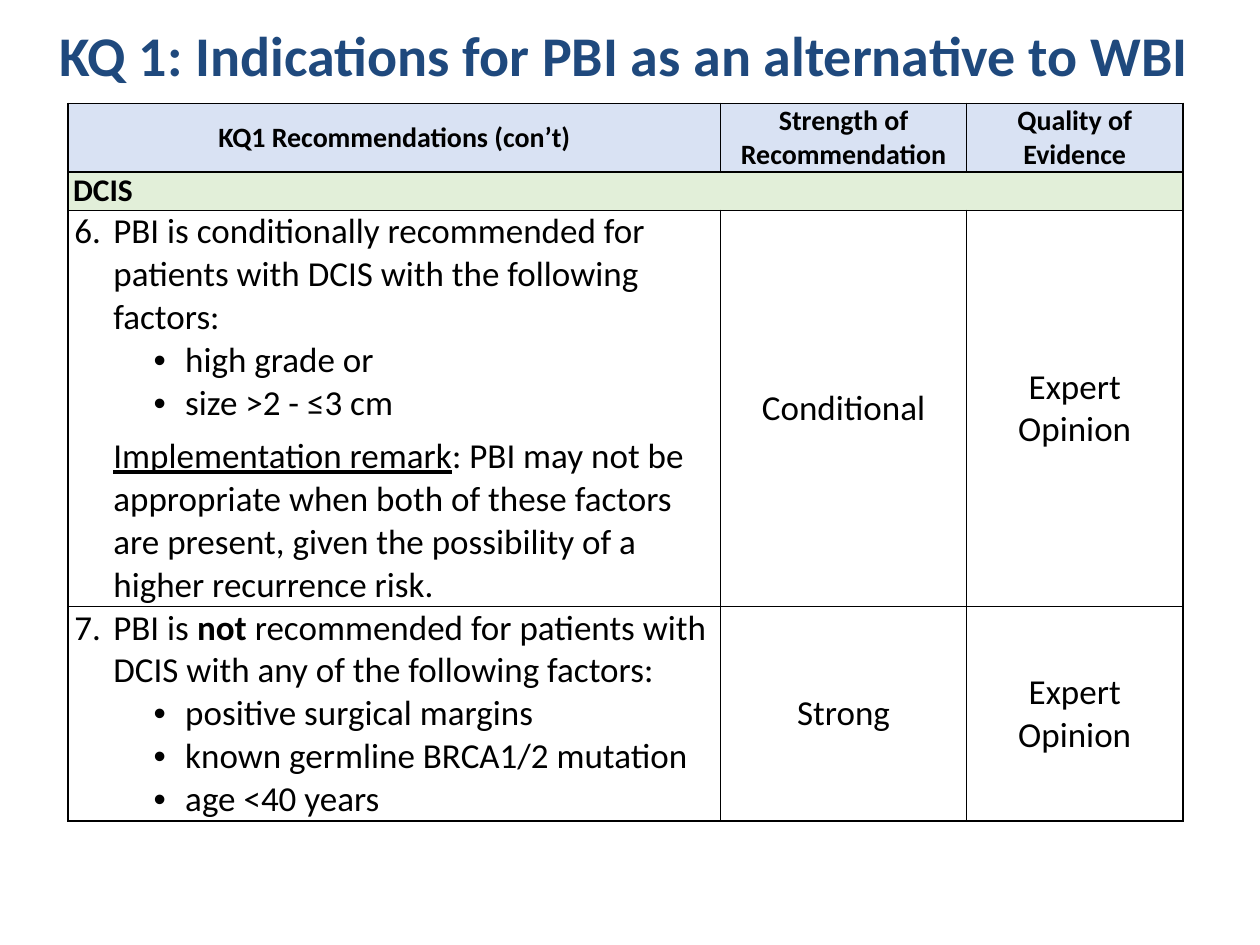
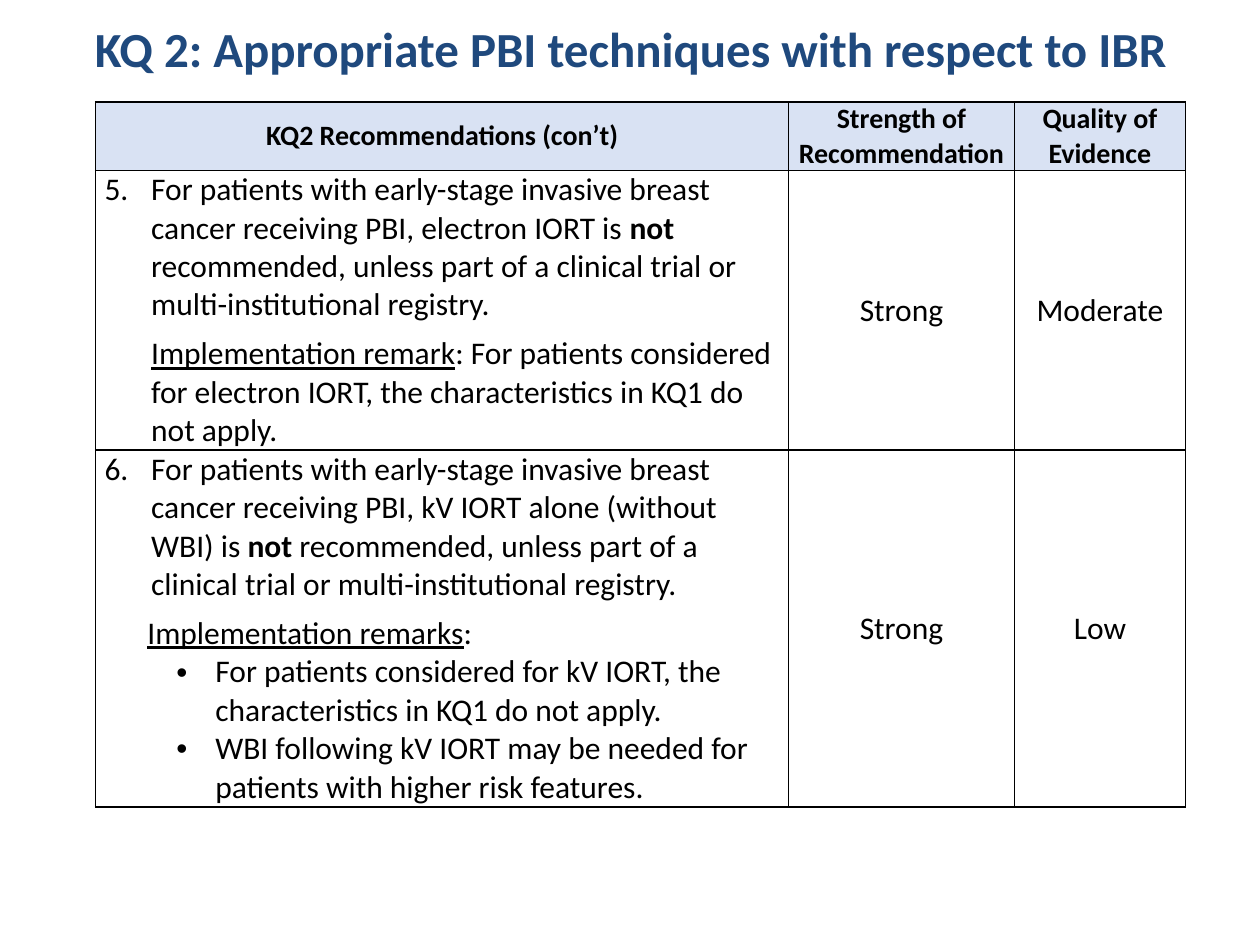
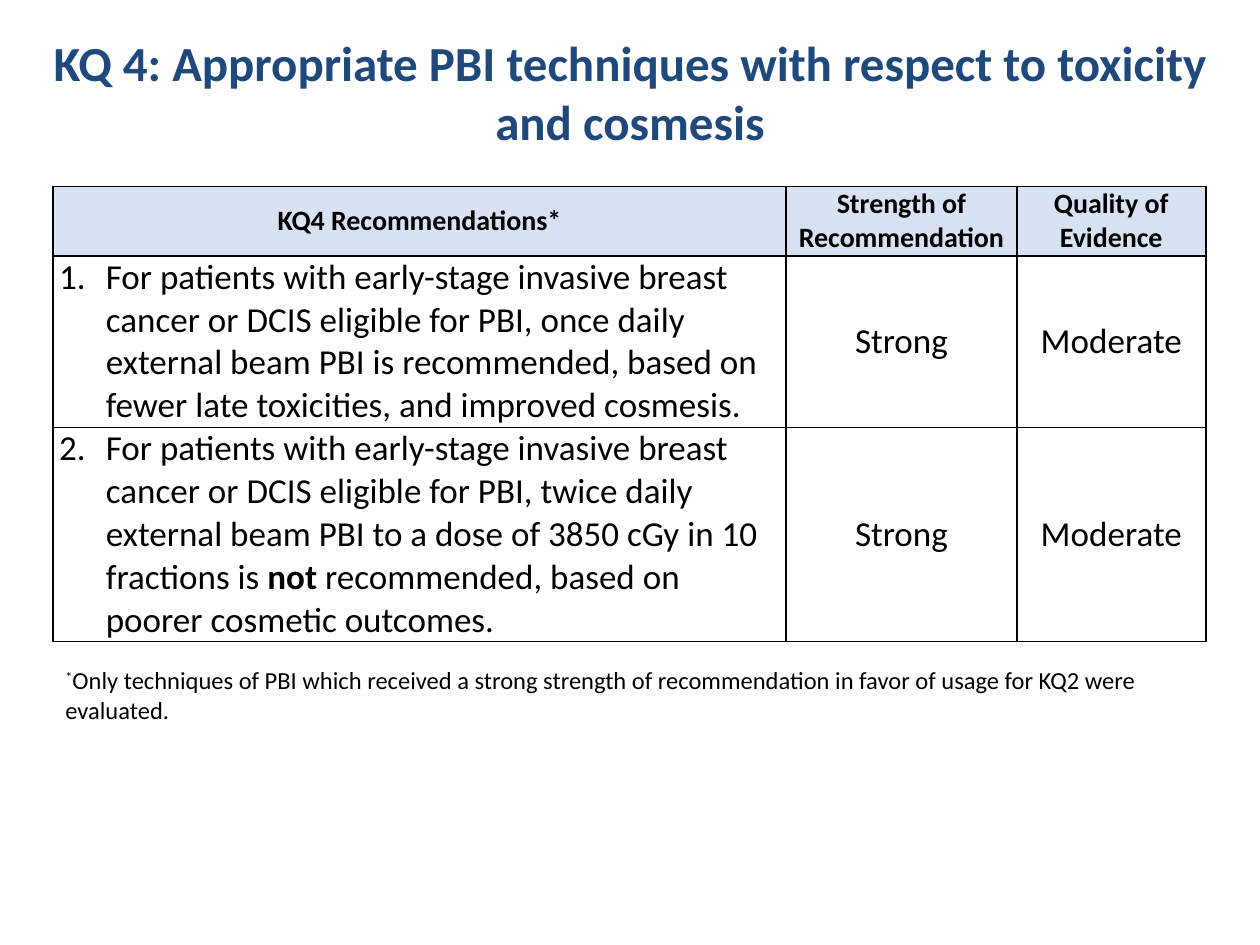
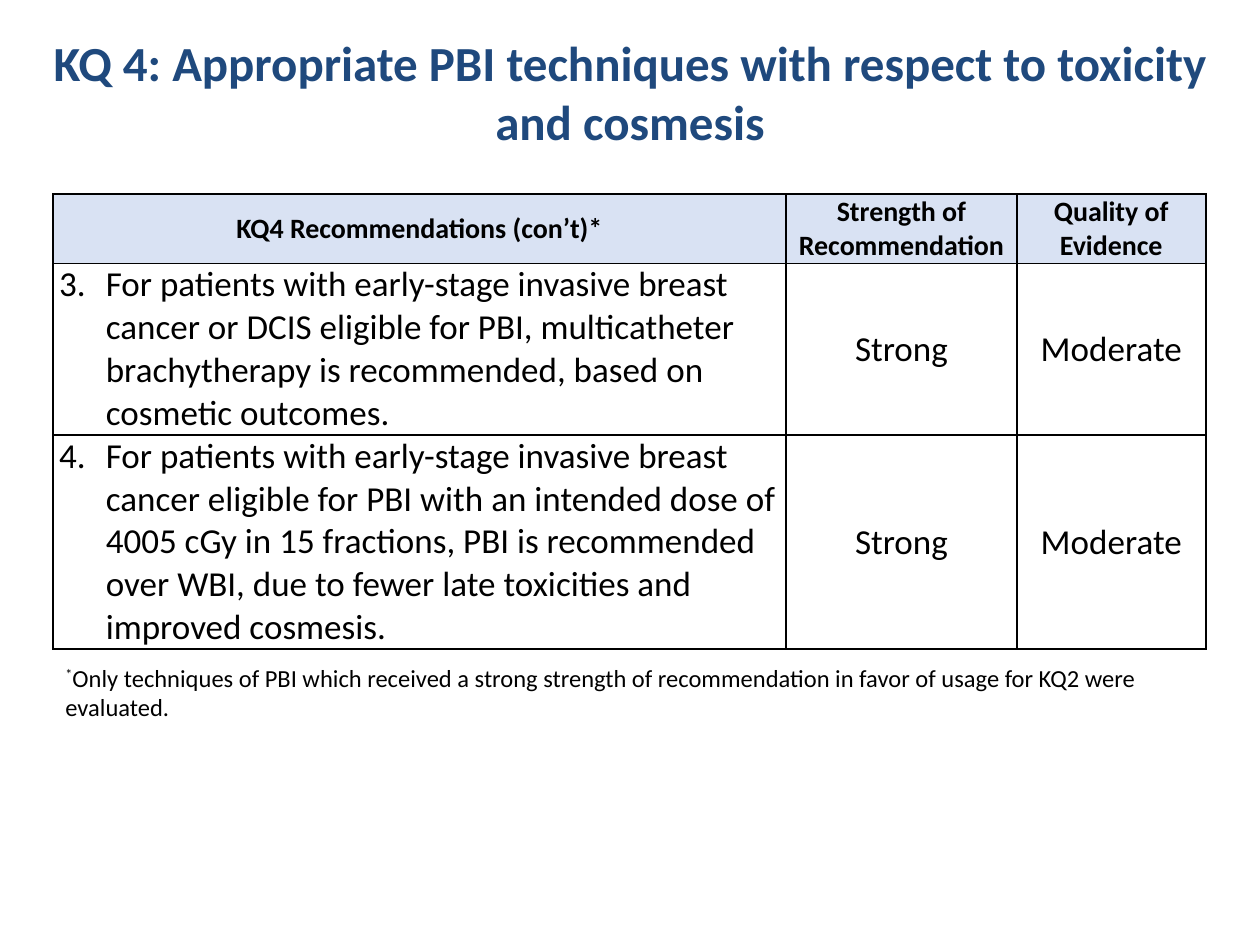
from dataclasses import dataclass, field

from lxml.etree import SubElement as Sub
from pptx import Presentation
from pptx.dml.color import RGBColor as RGB
from pptx.enum.text import MSO_ANCHOR as Anchor, MSO_AUTO_SIZE as Fit, PP_ALIGN as Align
from pptx.oxml.ns import qn
from pptx.util import Inches, Pt


@dataclass
class Theme:
    font: str = "Calibri"
    ink: str = "000000"
    navy: str = "1F497D"
    blue: str = "D9E2F3"
    green: str = "E2EFD9"
    head: int = 16
    band: int = 18
    note: int = 14
    line: float = 1


@dataclass
class Para:
    """Runs are plain strings or (text, style) pairs; style is bold, under or super."""
    runs: list
    left: float = 0
    hang: float = 0
    after: int = 0
    dot: bool = False
    num: int = 0


@dataclass
class Grid:
    at: tuple
    cols: list
    rows: list
    size: int
    pad: float = 0.05
    top: float = 0.05


def item(num, *runs, left=0.37, after=0):
    return Para(list(runs), left, -left, after, num=num)


def point(text, hang=0.25, after=0):
    return Para([text], 0.88, -hang, after, dot=True)


def remark(text, left, label="Implementation remark"):
    return Para([(label, "under"), text], left)


class Deck:
    def __init__(self, theme):
        self.theme = theme
        self.show = Presentation()
        self.show.slide_width, self.show.slide_height = Inches(10), Inches(7.5)
        self.slide = None

    def text(self, frame, paras, size, color=None, bold=False, align=Align.LEFT):
        for i, para in enumerate(paras):
            p = frame.paragraphs[0] if i == 0 else frame.add_paragraph()
            self.mark(p, para)
            p.alignment = align
            p.space_after = Pt(para.after)
            for part in para.runs:
                words, style = (part, "") if isinstance(part, str) else part
                run = p.add_run()
                run.text = words
                font = run.font
                font.name, font.size = self.theme.font, Pt(size)
                font.color.rgb = RGB.from_string(color or self.theme.ink)
                font.bold = bold or style == "bold"
                if style == "under":
                    font.underline = True
                if style == "super":
                    run._r.get_or_add_rPr().set("baseline", "30000")

    def mark(self, p, para):
        """Set the indent and the bullet or number of a paragraph."""
        props = p._p.get_or_add_pPr()
        props.set("marL", str(Inches(para.left)))
        props.set("indent", str(Inches(para.hang)))
        if para.dot:
            Sub(props, qn("a:buFont"), typeface="Arial")
            Sub(props, qn("a:buChar"), char="•")
        elif para.num:
            Sub(props, qn("a:buFont"), typeface="+mj-lt")
            Sub(props, qn("a:buAutoNum"), type="arabicPeriod", startAt=str(para.num))
        else:
            Sub(props, qn("a:buNone"))

    def title(self, words, at, size=28):
        self.slide = self.show.slides.add_slide(self.show.slide_layouts[5])
        box = self.slide.shapes.title
        box.left, box.top, box.width, box.height = map(Inches, at)
        frame = box.text_frame
        frame.word_wrap, frame.auto_size = True, Fit.NONE
        frame.vertical_anchor = Anchor.TOP
        self.text(frame, [Para([words])], size, self.theme.navy, True, Align.CENTER)

    def cell(self, cell, paras, size, pad, fill=None, bold=False, mid=True, align=Align.CENTER):
        cell.margin_left = cell.margin_right = Inches(pad)
        cell.margin_top = cell.margin_bottom = 0
        cell.vertical_anchor = Anchor.MIDDLE if mid else Anchor.TOP
        self.text(cell.text_frame, paras, size, bold=bold, align=align)
        self.edge(cell)
        if fill:
            cell.fill.solid()
            cell.fill.fore_color.rgb = RGB.from_string(fill)
        else:
            cell.fill.background()

    def edge(self, cell):
        props = cell._tc.get_or_add_tcPr()
        for side in ("lnL", "lnR", "lnT", "lnB"):
            line = Sub(props, qn(f"a:{side}"), w=str(Pt(self.theme.line)))
            Sub(Sub(line, qn("a:solidFill")), qn("a:srgbClr"), val=self.theme.ink)

    def table(self, grid, head, body):
        """Body rows hold (paragraphs, strength, quality), or one string for a band."""
        theme = self.theme
        box = self.slide.shapes.add_table(len(body) + 1, 3, *map(Inches, grid.at))
        table = box.table
        table.first_row = table.horz_banding = False
        for col, width in zip(table.columns, grid.cols):
            col.width = Inches(width)
        for row, height in zip(table.rows, grid.rows):
            row.height = Inches(height)
        box.height = Inches(grid.at[3])
        for c, words in enumerate((head, "Strength of Recommendation", "Quality of Evidence")):
            self.cell(table.cell(0, c), [Para([words])], theme.head, grid.top, theme.blue, True)
        for r, row in enumerate(body, 1):
            first = table.cell(r, 0)
            if isinstance(row, str):
                first.merge(table.cell(r, 2))
                self.cell(first, [Para([row])], theme.band, grid.top, theme.green, True,
                          align=Align.LEFT)
                for c in (1, 2):
                    self.edge(table.cell(r, c))
                continue
            paras, *grades = row
            self.cell(first, paras, grid.size, grid.pad, mid=False, align=Align.LEFT)
            for c, words in enumerate(grades, 1):
                self.cell(table.cell(r, c), [Para([words])], grid.size, grid.pad)

    def note(self, at):
        frame = self.slide.shapes.add_textbox(*map(Inches, at)).text_frame
        frame.word_wrap, frame.auto_size = True, Fit.SHAPE_TO_FIT_TEXT
        words = ("Only techniques of PBI which received a strong strength of "
                 "recommendation in favor of usage for KQ2 were evaluated.")
        self.text(frame, [Para([("*", "super"), words])], self.theme.note)


def cosmesis(deck, head, top, rows, body, note):
    deck.title("KQ 4: Appropriate PBI techniques with respect to toxicity and cosmesis",
               (0.16, 0.21, 9.68, 0.56))
    deck.table(Grid((0.42, top, 9.16, 3.55), [5.82, 1.83, 1.5], rows, 20), head,
               [([para], "Strong", "Moderate") for para in body])
    deck.note(note)


def main():
    deck = Deck(Theme())
    not_ = ("not", "bold")

    deck.title("KQ 1: Indications for PBI as an alternative to WBI", (0.33, 0.11, 9.25, 0.51), 32)
    deck.table(
        Grid((0.54, 0.82, 8.84, 5.58), [5.18, 1.95, 1.72], [0.42, 0.18, 1.34, 1.55], 20, top=0.04),
        "KQ1 Recommendations (con’t)",
        ["DCIS",
         ([item(6, "PBI is conditionally recommended for patients with DCIS with the "
                   "following factors:", left=0.31),
           point("high grade or"),
           point("size >2 - ≤3 cm", after=6),
           remark(": PBI may not be appropriate when both of these factors are present, "
                  "given the possibility of a higher recurrence risk.", 0.31)],
          "Conditional", "Expert Opinion"),
         ([item(7, "PBI is ", not_, " recommended for patients with DCIS with any of the "
                   "following factors:", left=0.31),
           point("positive surgical margins"),
           point("known germline BRCA1/2 mutation"),
           point("age <40 years")],
          "Strong", "Expert Opinion")])

    deck.title("KQ 2: Appropriate PBI techniques with respect to IBR", (0.38, 0.1, 9.25, 0.71))
    deck.table(
        Grid((0.76, 0.81, 8.65, 5.5), [5.5, 1.79, 1.36], [0.5, 1.47, 1.66], 18, pad=0.07),
        "KQ2 Recommendations (con’t)",
        [([item(5, "For patients with early-stage invasive breast cancer receiving PBI, "
                   "electron IORT is ", ("not ", "bold"),
                "recommended, unless part of a clinical trial or multi-institutional registry.",
                after=6),
           remark(": For patients considered for electron IORT, the characteristics in KQ1 "
                  "do not apply.", 0.37)],
          "Strong", "Moderate"),
         ([item(6, "For patients with early-stage invasive breast cancer receiving PBI, "
                   "kV IORT alone (without WBI) is ", not_,
                " recommended, unless part of a clinical trial or multi-institutional registry.",
                after=6),
           remark(":", 0.34, "Implementation remarks"),
           point("For patients considered for kV IORT, the characteristics in KQ1 do not apply.",
                 0.31),
           point("WBI following kV IORT may be needed for patients with higher risk features.",
                 0.31)],
          "Strong", "Low")])

    cosmesis(
        deck, "KQ4 Recommendations*", 1.48, [0.55, 1.14, 1.43],
        [item(1, "For patients with early-stage invasive breast cancer or DCIS eligible for PBI, "
                 "once daily external beam PBI is recommended, based on fewer late toxicities, "
                 "and improved cosmesis."),
         item(2, "For patients with early-stage invasive breast cancer or DCIS eligible for PBI, "
                 "twice daily external beam PBI to a dose of 3850 cGy in 10 fractions is ",
              not_, " recommended, based on poorer cosmetic outcomes.")],
        (0.42, 5.23, 9.16, 0.57))

    cosmesis(
        deck, "KQ4 Recommendations (con’t)*", 1.54, [0.55, 0.94, 1.47],
        [item(3, "For patients with early-stage invasive breast cancer or DCIS eligible for PBI, "
                 "multicatheter brachytherapy is recommended, based on cosmetic outcomes."),
         item(4, "For patients with early-stage invasive breast cancer eligible for PBI with an "
                 "intended dose of 4005 cGy in 15 fractions, PBI is recommended over WBI, due to "
                 "fewer late toxicities and improved cosmesis.")],
        (0.42, 5.21, 9.02, 0.57))

    deck.show.save("out.pptx")


if __name__ == "__main__":
    main()
